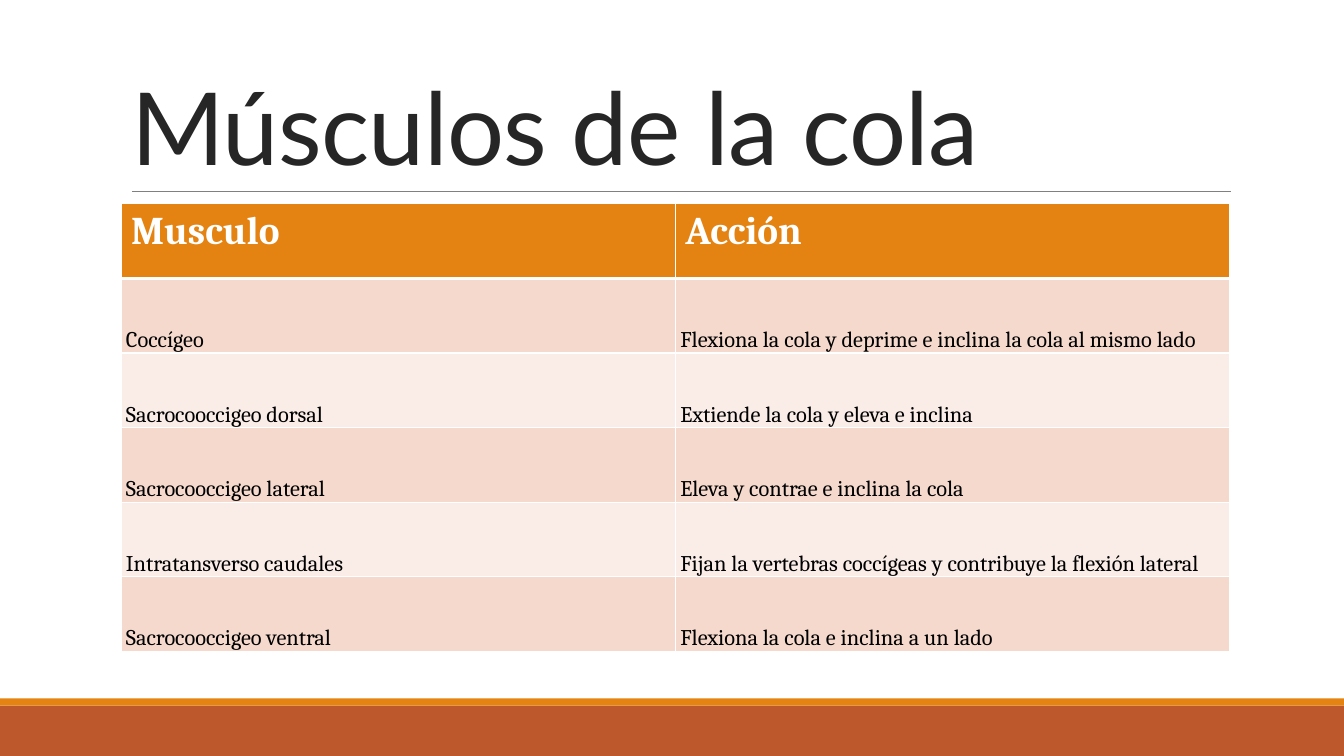
from dataclasses import dataclass

from lxml import etree
from pptx import Presentation
from pptx.dml.color import RGBColor
from pptx.enum import shapes, text
from pptx.oxml import ns
from pptx.util import Pt


@dataclass(frozen=True)
class Theme:
    title_font: str = "Lato"
    body_font: str = "Cambria"
    title_size: float = 72
    head_size: float = 28
    body_size: float = 16
    ink: str = "262626"
    black: str = "000000"
    white: str = "FFFFFF"
    rule: str = "808080"
    orange: str = "E48312"
    rust: str = "BD582C"
    bands: tuple[str, str] = ("F5D9CC", "FAEDE7")


@dataclass(frozen=True)
class Bar:
    top: float
    height: float
    color: str


@dataclass(frozen=True)
class Muscle:
    name: str
    action: str


@dataclass(frozen=True)
class CellStyle:
    fill: str
    color: str
    size: float
    bold: bool
    bottom_width: float


THEME = Theme()
WIDTH, HEIGHT = 960, 540
LEFT, CONTENT_WIDTH = 86.4, 792
TABLE_TOP, ROW_HEIGHT = 145.6, 53.3

BARS = [Bar(504, 36, THEME.rust), Bar(498.8, 5.2, THEME.orange)]
HEADER = Muscle("Musculo", "Acción")
MUSCLES = [
    Muscle("Coccígeo", "Flexiona la cola y deprime e inclina la cola al mismo lado"),
    Muscle("Sacrocooccigeo dorsal", "Extiende la cola y eleva e inclina"),
    Muscle("Sacrocooccigeo lateral", "Eleva y contrae e inclina la cola"),
    Muscle("Intratansverso caudales", "Fijan la vertebras coccígeas y contribuye la flexión lateral"),
    Muscle("Sacrocooccigeo ventral", "Flexiona la cola e inclina a un lado"),
]


def rgb(color: str) -> RGBColor:
    return RGBColor.from_string(color)


def format_run(r, font: str, size: float, color: str, bold: bool = False) -> None:
    r.font.name = font
    r.font.size = Pt(size)
    r.font.bold = bold
    r.font.color.rgb = rgb(color)


def add_bar(s, bar: Bar) -> None:
    sp = s.shapes.add_shape(
        shapes.MSO_SHAPE.RECTANGLE, 0, Pt(bar.top), Pt(WIDTH), Pt(bar.height)
    )
    sp.shadow.inherit = False
    sp.fill.solid()
    sp.fill.fore_color.rgb = rgb(bar.color)
    sp.line.fill.background()


def add_rule(s, left: float, right: float, top: float) -> None:
    line = s.shapes.add_connector(
        shapes.MSO_CONNECTOR.STRAIGHT, Pt(left), Pt(top), Pt(right), Pt(top)
    )
    line.line.color.rgb = rgb(THEME.rule)
    line.line.width = Pt(0.5)
    etree.SubElement(line._element.spPr, ns.qn("a:effectLst"))


def set_title(s, title: str) -> None:
    sp = s.shapes.title
    sp.left, sp.top = Pt(LEFT), Pt(22.3)
    sp.width, sp.height = Pt(CONTENT_WIDTH), Pt(114.5)
    tf = sp.text_frame
    tf.text = title
    tf.word_wrap = True
    tf.auto_size = text.MSO_AUTO_SIZE.NONE
    tf.vertical_anchor = text.MSO_ANCHOR.BOTTOM
    p = tf.paragraphs[0]
    p.alignment = text.PP_ALIGN.LEFT
    p.line_spacing = 0.85
    r = p.runs[0]
    format_run(r, THEME.title_font, THEME.title_size, THEME.ink)
    r.font._element.set("spc", "-50")


def set_borders(cell, top: float, bottom: float) -> None:
    tc_pr = cell._tc.get_or_add_tcPr()
    widths = {"lnL": 1, "lnR": 1, "lnT": top, "lnB": bottom}
    for i, (side, width) in enumerate(widths.items()):
        ln = etree.Element(ns.qn(f"a:{side}"), w=str(Pt(width)))
        fill = etree.SubElement(ln, ns.qn("a:solidFill"))
        etree.SubElement(fill, ns.qn("a:srgbClr"), val=THEME.white)
        tc_pr.insert(i, ln)


def fill_cell(cell, content: str, style: CellStyle) -> None:
    cell.text = content
    cell.fill.solid()
    cell.fill.fore_color.rgb = rgb(style.fill)
    format_run(
        cell.text_frame.paragraphs[0].runs[0],
        THEME.body_font, style.size, style.color, style.bold,
    )


def add_muscle_table(s, header: Muscle, muscles: list[Muscle]) -> None:
    rows = [header, *muscles]
    frame = s.shapes.add_table(
        len(rows), 2, Pt(LEFT), Pt(TABLE_TOP),
        Pt(CONTENT_WIDTH), Pt(ROW_HEIGHT * len(rows)),
    )
    head = CellStyle(THEME.orange, THEME.white, THEME.head_size, True, 3)
    body = [
        CellStyle(band, THEME.black, THEME.body_size, False, 1) for band in THEME.bands
    ]
    styles = [head] + [body[i % 2] for i in range(len(muscles))]
    above = 1
    for row, muscle, style in zip(frame.table.rows, rows, styles):
        row.height = Pt(ROW_HEIGHT)
        for cell, content in zip(row.cells, (muscle.name, muscle.action)):
            fill_cell(cell, content, style)
            set_borders(cell, above, style.bottom_width)
            if style is not head:
                cell.vertical_anchor = text.MSO_ANCHOR.BOTTOM
                cell.margin_left = cell.margin_right = Pt(3.6)
                cell.margin_top = cell.margin_bottom = 0
                cell.text_frame.paragraphs[0].line_spacing = 1.07
        above = style.bottom_width


def main() -> None:
    prs = Presentation()
    prs.slide_width, prs.slide_height = Pt(WIDTH), Pt(HEIGHT)
    s = prs.slides.add_slide(prs.slide_layouts.get_by_name("Title Only"))
    s.background.fill.solid()
    s.background.fill.fore_color.rgb = rgb(THEME.white)
    for bar in BARS:
        add_bar(s, bar)
    add_rule(s, 94.3, 879, 136.8)
    set_title(s, "Músculos de la cola")
    add_muscle_table(s, HEADER, MUSCLES)
    prs.save("out.pptx")


if __name__ == "__main__":
    main()
